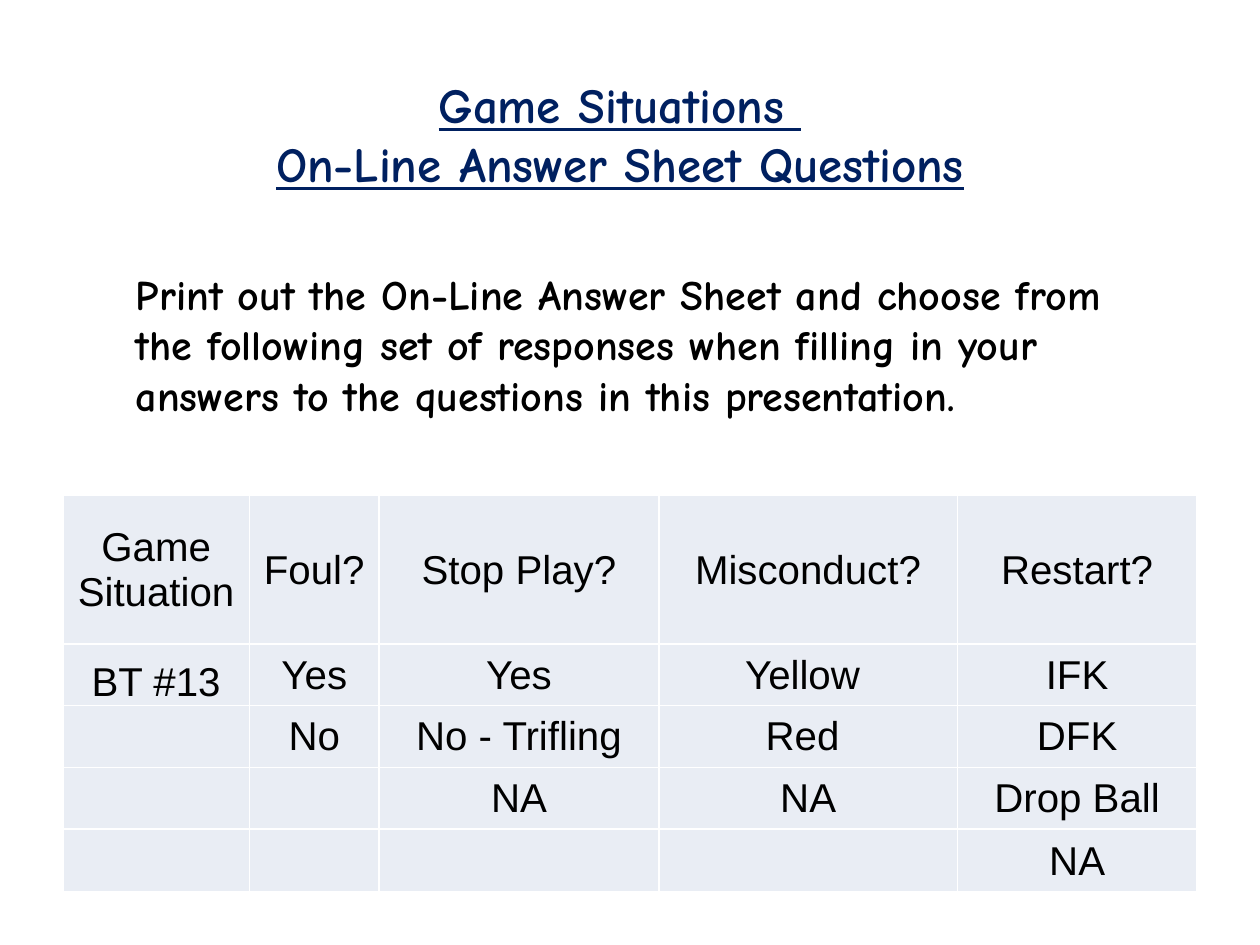
from lxml import etree
from pptx import Presentation
from pptx.dml.color import RGBColor
from pptx.enum import text
from pptx.oxml import ns
from pptx.util import Inches, Pt

THEME = {
    "hand": "Comic Neue", "sans": "Arial",
    "navy": "002060", "black": "000000", "cell": "E9EDF4", "rule": "FFFFFF",
    "title": 28, "body": 24, "grid": 23,
}
TITLE = ["Game Situations ", "On-Line Answer Sheet Questions"]
INTRO = ["Print out the On-Line Answer Sheet and choose from the following set "
         "of responses when filling in your answers to the questions in this "
         "presentation."]
ROWS = [
    ["Game Situation", "Foul?", "Stop Play?", "Misconduct?", "Restart?"],
    ["BT #13", "Yes", "Yes", "Yellow ", "IFK"],
    ["", "No", "No - Trifling", "Red ", "DFK"],
    ["", "", "NA", "NA", "Drop Ball"],
    ["", "", "", "", "NA"],
]
WIDTHS = [1.48, 1.03, 2.22, 2.37, 1.9]
HEIGHTS = [1.18, 0.49, 0.49, 0.49, 0.5]
CENTER = text.PP_ALIGN.CENTER


def style(para, face, size, color, align=None, bold=False, under=False):
    para.alignment = align
    font = para.font
    font.name, font.size = THEME[face], Pt(THEME[size])
    font.color.rgb = RGBColor.from_string(THEME[color])
    font.bold, font.underline = bold, under


def add_text(slide, box, lines, *look, **extra):
    frame = slide.shapes.add_textbox(*map(Inches, box)).text_frame
    frame.word_wrap = True
    frame.auto_size = text.MSO_AUTO_SIZE.SHAPE_TO_FIT_TEXT
    frame.text = "\n".join(lines)
    for para in frame.paragraphs:
        style(para, *look, **extra)


def add_rules(cell):
    """Draw a 1 pt rule on all four sides; call before the cell is filled."""
    props = cell._tc.get_or_add_tcPr()
    for side in ("lnL", "lnR", "lnT", "lnB"):
        line = etree.SubElement(props, ns.qn("a:" + side), w=str(Pt(1)))
        fill = etree.SubElement(line, ns.qn("a:solidFill"))
        etree.SubElement(fill, ns.qn("a:srgbClr"), val=THEME["rule"])


def add_grid(slide, left, top):
    size = map(Inches, (left, top, sum(WIDTHS), sum(HEIGHTS)))
    table = slide.shapes.add_table(len(ROWS), len(WIDTHS), *size).table
    table.first_row = table.horz_banding = False
    for col, width in zip(table.columns, WIDTHS):
        col.width = Inches(width)
    for row, height, words in zip(table.rows, HEIGHTS, ROWS):
        row.height = Inches(height)
        for cell, word in zip(row.cells, words):
            add_rules(cell)
            cell.fill.solid()
            cell.fill.fore_color.rgb = RGBColor.from_string(THEME["cell"])
            cell.margin_left = cell.margin_right = cell.margin_top = Inches(0.01)
            cell.margin_bottom = 0
            cell.vertical_anchor = text.MSO_ANCHOR.MIDDLE
            cell.text = word
            style(cell.text_frame.paragraphs[0], "sans", "grid", "black", CENTER)
    table.cell(1, 0).vertical_anchor = text.MSO_ANCHOR.BOTTOM


def main():
    deck = Presentation()
    deck.slide_width, deck.slide_height = Inches(10), Inches(7.5)
    slide = deck.slides.add_slide(deck.slide_layouts[6])
    add_text(slide, (1.67, 0.54, 6.5, 1.04), TITLE, "hand", "title", "navy",
             CENTER, bold=True, under=True)
    add_text(slide, (0.98, 2.08, 8.25, 1.72), INTRO, "hand", "body", "black",
             bold=True)
    add_grid(slide, 0.5, 3.93)
    deck.save("out.pptx")


if __name__ == "__main__":
    main()
